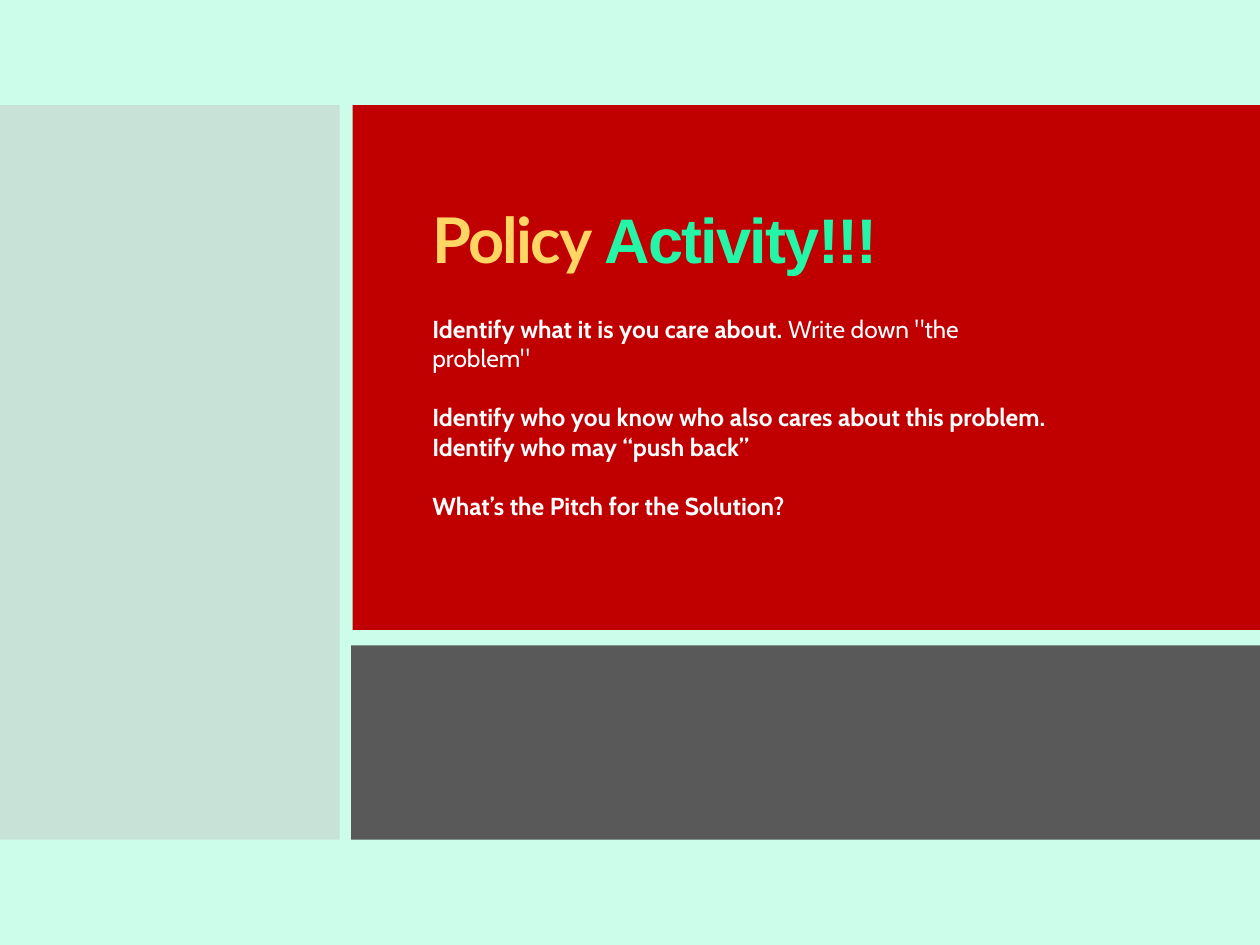
from pptx import Presentation
from pptx.dml.color import RGBColor
from pptx.enum.shapes import MSO_SHAPE
from pptx.enum.text import MSO_ANCHOR, MSO_AUTO_SIZE, PP_ALIGN
from pptx.oxml.ns import qn
from pptx.util import Cm, Pt
from lxml.etree import SubElement

WIDTH, HEIGHT = 25.4, 19.05
BAND_TOP, BAND_BOTTOM = 2.12, 16.93
TEXT_LEFT = 8.46

# left, top, right, bottom in cm, colour, opacity in percent
PANELS = [
    (7.08, 13.01, WIDTH, BAND_BOTTOM, "595959", 100),
    (7.11, BAND_TOP, WIDTH, 12.7, "C00000", 100),
    (0, BAND_TOP, 6.85, BAND_BOTTOM, "C8C8C8", 50),
]
TITLE_RUNS = [("Policy ", "Lato", "FFD663"), ("Activity!!!", "Arial", "24F6A7")]
# space before in pt, then (text, bold) runs
STEPS = [
    (0, [("Identify what it is you care about.", True),
         ("\u00a0Write down \"the problem\"", False)]),
    (17, [("Identify who you know who also cares about this problem.", True)]),
    (0, [("Identify who may “push back”", True)]),
    (17, [("What’s the Pitch for the Solution?", True)]),
]


def rgb(value):
    return RGBColor.from_string(value)


def add_panel(slide, left, top, right, bottom, color, opacity):
    panel = slide.shapes.add_shape(
        MSO_SHAPE.RECTANGLE, Cm(left), Cm(top), Cm(right - left), Cm(bottom - top))
    panel.shadow.inherit = False
    panel.line.fill.background()
    panel.fill.solid()
    panel.fill.fore_color.rgb = rgb(color)
    if opacity < 100:
        color_element = panel.fill._xPr.find(qn("a:solidFill"))[0]
        SubElement(color_element, qn("a:alpha")).set("val", str(opacity * 1000))


def place(shape, top, width, height, anchor):
    """Position a text placeholder on the shared left edge and fix its frame."""
    shape.left, shape.top = Cm(TEXT_LEFT), Cm(top)
    shape.width, shape.height = Cm(width), Cm(height)
    frame = shape.text_frame
    frame.word_wrap = True
    frame.auto_size = MSO_AUTO_SIZE.NONE
    frame.vertical_anchor = anchor
    return frame


def fill_title(title):
    paragraph = place(title, 4.01, 15, 1.7, MSO_ANCHOR.BOTTOM).paragraphs[0]
    paragraph.alignment = PP_ALIGN.LEFT
    paragraph.line_spacing = 0.9
    for text, font_name, color in TITLE_RUNS:
        run = paragraph.add_run()
        run.text = text
        run.font.name, run.font.size, run.font.bold = font_name, Pt(36), True
        run.font.color.rgb = rgb(color)
        run.font._element.set("spc", "-100")


def fill_steps(body):
    frame = place(body, 6.2, 13.15, 6.25, MSO_ANCHOR.TOP)
    for index, (space_before, runs) in enumerate(STEPS):
        paragraph = frame.add_paragraph() if index else frame.paragraphs[0]
        paragraph.space_before = Pt(space_before)
        paragraph.font.name, paragraph.font.size = "Cabin", Pt(14)
        paragraph.font.color.rgb = rgb("FFFFFF")
        properties = paragraph._p.get_or_add_pPr()
        properties.set("marL", "0")
        properties.set("indent", "0")
        properties.insert_element_before(
            properties.makeelement(qn("a:buNone"), {}), "a:tabLst", "a:defRPr")
        for text, bold in runs:
            run = paragraph.add_run()
            run.text = text
            run.font.bold = bold


def main():
    presentation = Presentation()
    presentation.slide_width, presentation.slide_height = Cm(WIDTH), Cm(HEIGHT)
    slide = presentation.slides.add_slide(presentation.slide_layouts[1])
    slide.background.fill.solid()
    slide.background.fill.fore_color.rgb = rgb("CBFDEA")
    title, body = slide.placeholders
    for panel in PANELS:
        add_panel(slide, *panel)
    for placeholder in (title, body):
        slide.shapes._spTree.append(placeholder._element)  # bring to front
    fill_title(title)
    fill_steps(body)
    presentation.save("out.pptx")


if __name__ == "__main__":
    main()
